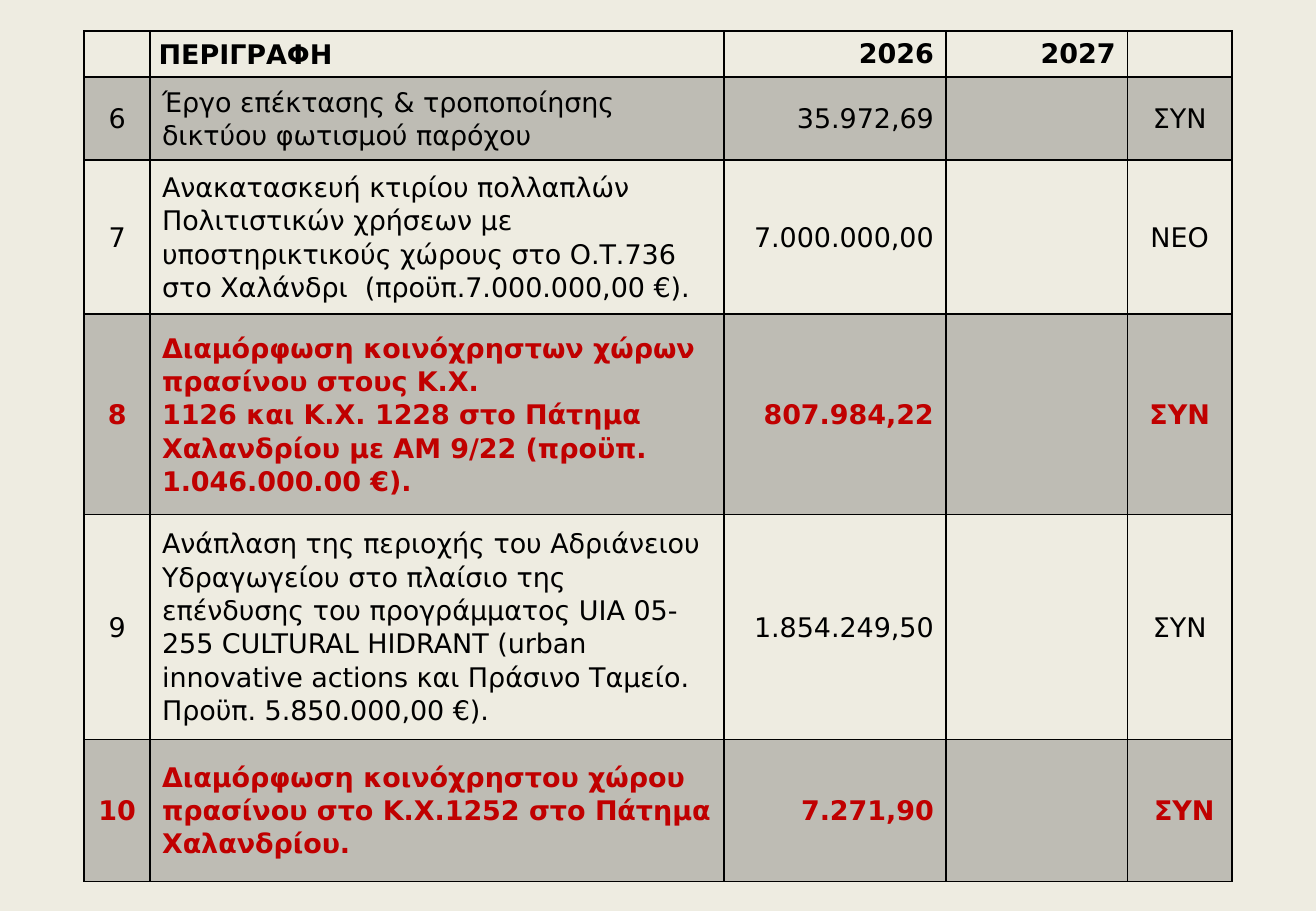
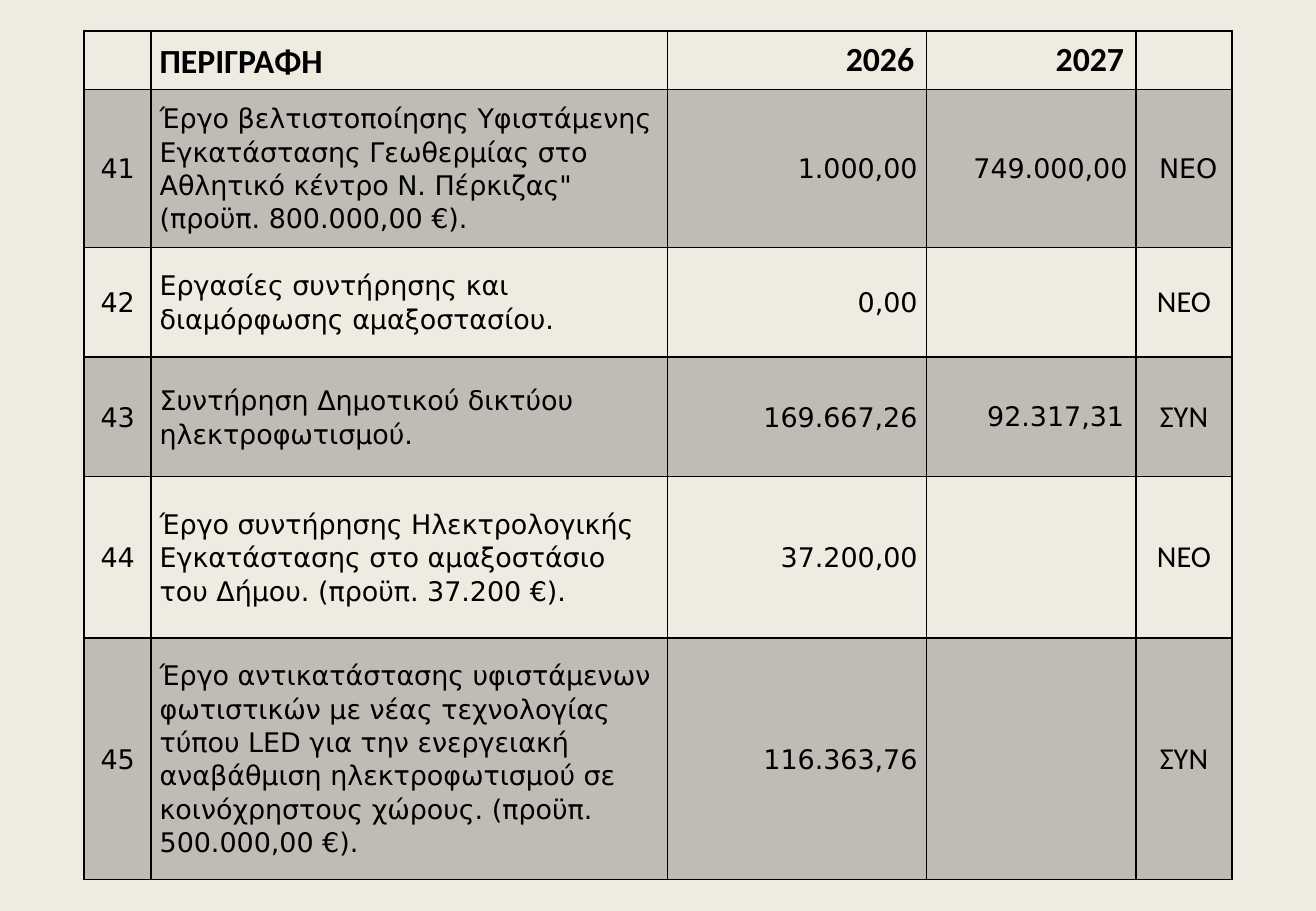
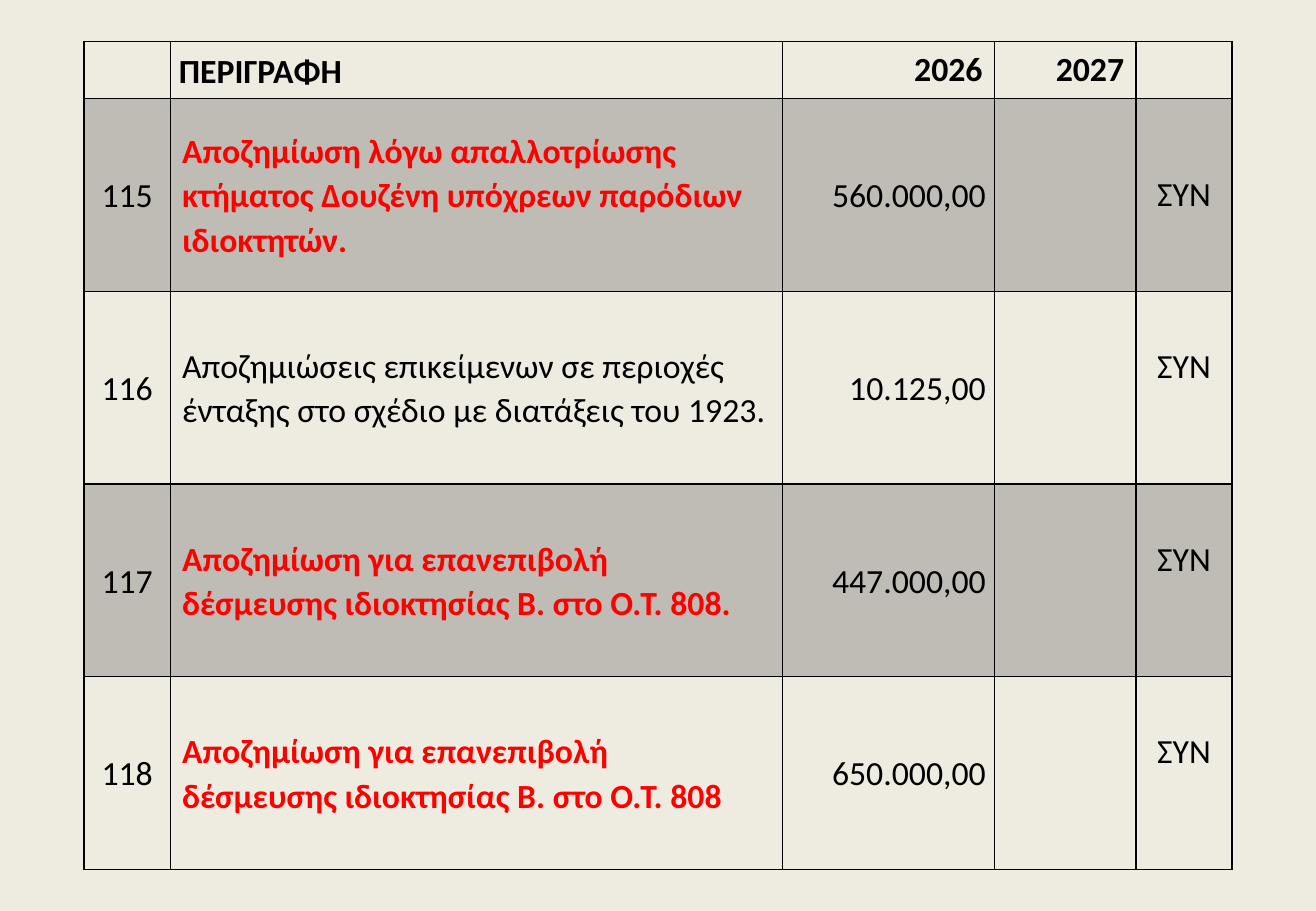
from dataclasses import dataclass, field, replace

from lxml.etree import SubElement
from pptx import Presentation
from pptx.dml.color import RGBColor
from pptx.enum.text import MSO_ANCHOR, PP_ALIGN
from pptx.oxml import parse_xml
from pptx.oxml.ns import nsdecls, qn
from pptx.util import Cm, Pt


@dataclass(frozen=True)
class Theme:
    background: RGBColor = RGBColor(0xEE, 0xEC, 0xE1)
    ink: RGBColor = RGBColor(0, 0, 0)
    dark_red: RGBColor = RGBColor(0xC0, 0, 0)
    red: RGBColor = RGBColor(0xFF, 0, 0)
    band_opacity: int = 20
    border_pt: float = 0.96
    wide: str = "DejaVu Sans"
    narrow: str = "Calibri"
    small: int = 16
    medium: int = 18
    large: int = 20


THEME = Theme()


@dataclass(frozen=True)
class CellStyle:
    font: str
    size: int
    spacing: float = 1.07
    side: float = 0.25
    bottom: float = 0.13


@dataclass(frozen=True)
class Project:
    number: str
    description: str
    year_2026: str
    year_2027: str
    status: str
    accented: bool = False

    def texts(self):
        return (self.number, self.description, self.year_2026,
                self.year_2027, self.status)


@dataclass(frozen=True)
class BudgetPage:
    top: float
    widths: tuple
    heights: tuple
    header: CellStyle
    columns: tuple
    projects: tuple
    accent: RGBColor = THEME.ink
    accent_columns: tuple = ()
    exceptions: dict = field(default_factory=dict)  # (row, column) -> style


LEFT = 1.76
TIGHT = 0.18
HEADINGS = ("", "ΠΕΡΙΓΡΑΦΗ", "2026", "2027", "")
ALIGNMENTS = (PP_ALIGN.CENTER, PP_ALIGN.LEFT, PP_ALIGN.RIGHT,
              PP_ALIGN.RIGHT, PP_ALIGN.CENTER)

WIDE = CellStyle(THEME.wide, THEME.small)
WIDE_TIGHT = replace(WIDE, side=TIGHT)
WIDE_SINGLE = replace(WIDE, spacing=1.0)
NARROW = CellStyle(THEME.narrow, THEME.large)
NARROW_TIGHT = replace(NARROW, side=TIGHT)
NARROW_SINGLE = replace(NARROW, spacing=1.0)
STATUS = replace(NARROW_SINGLE, size=THEME.medium)
RAISED = replace(NARROW_SINGLE, bottom=1.0)

PAGES = (
    BudgetPage(
        top=0.65,
        widths=(1.38, 12, 4.64, 3.8, 2.18),
        heights=(0.95, 1.74, 3.22, 4.19, 4.7, 2.97),
        header=WIDE,
        columns=(WIDE,) * 5,
        accent=THEME.dark_red,
        accent_columns=(0, 1, 2, 3, 4),
        projects=(
            Project("6", "Έργο επέκτασης & τροποποίησης δικτύου φωτισμού παρόχου",
                    "35.972,69", "", "ΣΥΝ"),
            Project("7", "Ανακατασκευή κτιρίου πολλαπλών Πολιτιστικών χρήσεων με "
                    "υποστηρικτικούς χώρους στο Ο.Τ.736 στο Χαλάνδρι  "
                    "(προϋπ.7.000.000,00 €).", "7.000.000,00", "", "ΝΕΟ"),
            Project("8", "Διαμόρφωση κοινόχρηστων χώρων πρασίνου στους Κ.Χ.\v"
                    "1126 και Κ.Χ. 1228 στο Πάτημα Χαλανδρίου με ΑΜ 9/22 "
                    "(προϋπ. 1.046.000.00 €).", "807.984,22", "", "ΣΥΝ", True),
            Project("9", "Ανάπλαση της περιοχής του Αδριάνειου Υδραγωγείου στο "
                    "πλαίσιο της επένδυσης του προγράμματος UIA 05-255 CULTURAL "
                    "HIDRANT (urban innovative actions και Πράσινο Ταμείο. "
                    "Προϋπ. 5.850.000,00 €).", "1.854.249,50", "", "ΣΥΝ"),
            Project("10", "Διαμόρφωση κοινόχρηστου χώρου πρασίνου στο Κ.Χ.1252 "
                    "στο Πάτημα Χαλανδρίου.", "7.271,90", "", " ΣΥΝ", True),
        ),
    ),
    BudgetPage(
        top=0.65,
        widths=(1.4, 10.8, 5.41, 4.39, 2),
        heights=(1.22, 3.3, 2.3, 2.5, 3.37, 5.05),
        header=NARROW,
        columns=(WIDE_TIGHT,) * 4 + (STATUS,),
        exceptions={(1, 4): WIDE_TIGHT, (3, 3): WIDE_SINGLE},
        projects=(
            Project("41", "Έργο βελτιστοποίησης Υφιστάμενης Εγκατάστασης "
                    "Γεωθερμίας στο Αθλητικό κέντρο Ν. Πέρκιζας\" "
                    "(προϋπ. 800.000,00 €).", "1.000,00", "749.000,00", " ΝΕΟ"),
            Project("42", "Εργασίες συντήρησης και διαμόρφωσης αμαξοστασίου.",
                    "0,00", "", "ΝΕΟ"),
            Project("43", "Συντήρηση Δημοτικού δικτύου ηλεκτροφωτισμού.",
                    "169.667,26", "92.317,31", "ΣΥΝ"),
            Project("44", "Έργο συντήρησης Ηλεκτρολογικής Εγκατάστασης στο "
                    "αμαξοστάσιο του Δήμου. (προϋπ. 37.200 €).",
                    "37.200,00", "", "ΝΕΟ"),
            Project("45", "Έργο αντικατάστασης υφιστάμενων φωτιστικών με νέας "
                    "τεχνολογίας τύπου LED για την ενεργειακή αναβάθμιση "
                    "ηλεκτροφωτισμού σε κοινόχρηστους χώρους. "
                    "(προϋπ. 500.000,00 €).", "116.363,76", "", "ΣΥΝ"),
        ),
    ),
    BudgetPage(
        top=0.87,
        widths=(1.8, 12.8, 4.44, 2.96, 2),
        heights=(1.19,) + (4.03,) * 4,
        header=NARROW,
        columns=(NARROW_TIGHT, NARROW, NARROW_TIGHT, NARROW, NARROW_SINGLE),
        accent=THEME.red,
        accent_columns=(1,),
        exceptions={(row, 4): RAISED for row in (2, 3, 4)},
        projects=(
            Project("115", "Αποζημίωση λόγω απαλλοτρίωσης κτήματος Δουζένη "
                    "υπόχρεων παρόδιων ιδιοκτητών.", "560.000,00", "", "ΣΥΝ", True),
            Project("116", "Αποζημιώσεις επικείμενων σε περιοχές ένταξης στο "
                    "σχέδιο με διατάξεις του 1923.", "10.125,00", "", "ΣΥΝ"),
            Project("117", "Αποζημίωση για επανεπιβολή δέσμευσης ιδιοκτησίας Β. "
                    "στο Ο.Τ. 808.", "447.000,00", "", "ΣΥΝ", True),
            Project("118", "Αποζημίωση για επανεπιβολή δέσμευσης ιδιοκτησίας Β. "
                    "στο Ο.Τ. 808", "650.000,00", "", "ΣΥΝ", True),
        ),
    ),
)


def add_borders(cell):
    tc_pr = cell._tc.get_or_add_tcPr()
    for i, side in enumerate(("lnL", "lnR", "lnT", "lnB")):
        tc_pr.insert(i, parse_xml(
            f'<a:{side} {nsdecls("a")} w="{Pt(THEME.border_pt)}"><a:solidFill>'
            f'<a:srgbClr val="{THEME.ink}"/></a:solidFill></a:{side}>'))


def fill_cell(cell, shaded):
    if not shaded:
        cell.fill.background()
        return
    cell.fill.solid()
    cell.fill.fore_color.rgb = THEME.ink
    color = cell._tc.tcPr.find(qn("a:solidFill")).find(qn("a:srgbClr"))
    SubElement(color, qn("a:alpha")).set("val", str(THEME.band_opacity * 1000))


def write_cell(cell, text, style, alignment, color=THEME.ink, bold=False):
    cell.vertical_anchor = MSO_ANCHOR.MIDDLE
    cell.margin_left = cell.margin_right = Cm(style.side)
    cell.margin_top = Cm(0.13)
    cell.margin_bottom = Cm(style.bottom)
    p = cell.text_frame.paragraphs[0]
    p.text = text
    p.alignment = alignment
    p.line_spacing = style.spacing
    p.font.name = style.font
    p.font.size = Pt(style.size)
    p.font.bold = bold
    p.font.color.rgb = color


def write_header(table, style):
    title = replace(style, side=TIGHT)
    year = replace(style, spacing=1.0)
    styles = (year, title, year, year, year)
    for col, (text, cell_style) in enumerate(zip(HEADINGS, styles)):
        write_cell(table.cell(0, col), text, cell_style, ALIGNMENTS[col], bold=True)


def write_project(table, row, project, page):
    for col, text in enumerate(project.texts()):
        accented = project.accented and col in page.accent_columns
        write_cell(table.cell(row, col), text,
                   page.exceptions.get((row, col), page.columns[col]),
                   ALIGNMENTS[col], page.accent if accented else THEME.ink, accented)


def add_budget_table(slide, page):
    table = slide.shapes.add_table(
        len(page.heights), len(page.widths), Cm(LEFT), Cm(page.top),
        Cm(sum(page.widths)), Cm(sum(page.heights))).table
    table.first_row = table.horz_banding = False
    for column, width in zip(table.columns, page.widths):
        column.width = Cm(width)
    for i, (row, height) in enumerate(zip(table.rows, page.heights)):
        row.height = Cm(height)
        for cell in row.cells:
            fill_cell(cell, shaded=i % 2 == 1)
            add_borders(cell)
    write_header(table, page.header)
    for row, project in enumerate(page.projects, start=1):
        write_project(table, row, project, page)


def main():
    prs = Presentation()
    prs.slide_width, prs.slide_height = Cm(27.52), Cm(19.05)
    background = prs.slide_master.background.fill
    background.solid()
    background.fore_color.rgb = THEME.background
    blank = prs.slide_layouts.get_by_name("Blank")
    for page in PAGES:
        add_budget_table(prs.slides.add_slide(blank), page)
    prs.save("out.pptx")


if __name__ == "__main__":
    main()
